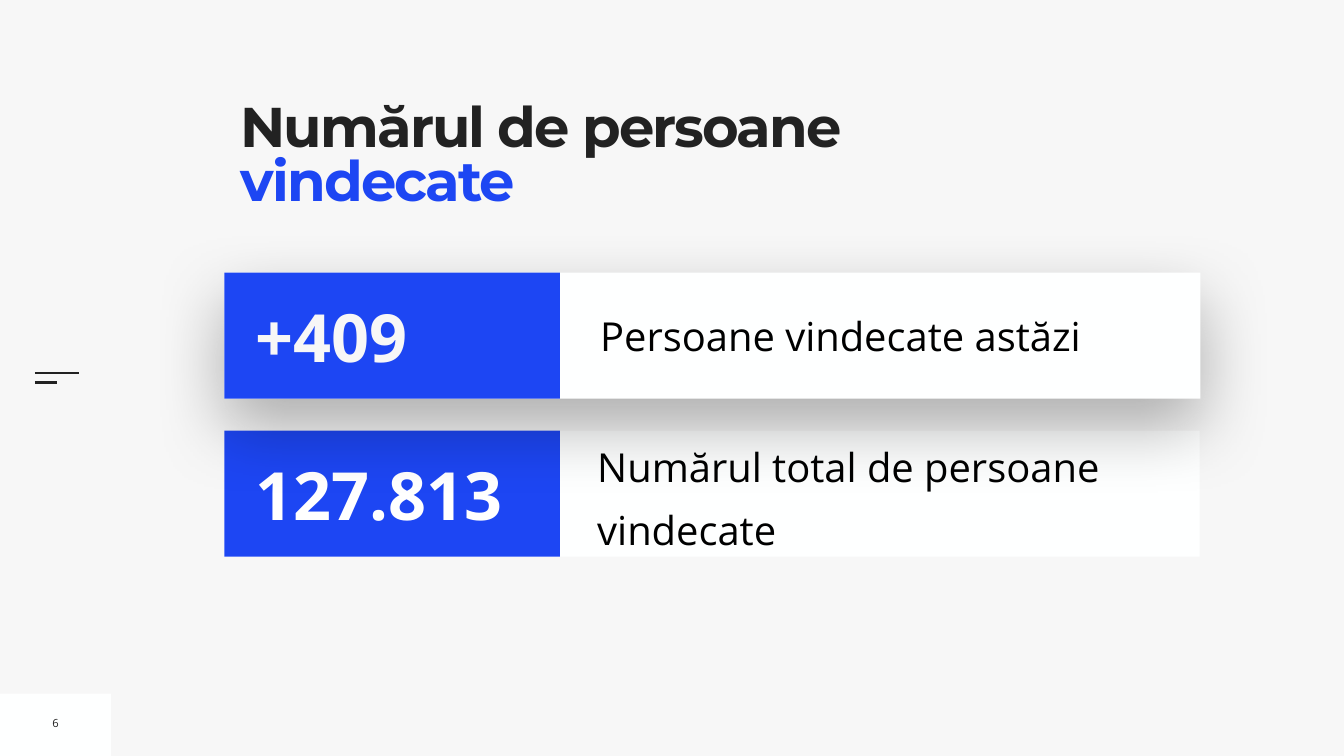
from lxml import etree
from pptx import Presentation
from pptx.dml.color import RGBColor
from pptx.enum import shapes, text
from pptx.oxml.ns import qn
from pptx.util import Pt

BLUE, INK, PAPER, WHITE = "1D46F3", "222222", "F7F7F7", "FEFFFF"
rgb = RGBColor.from_string

prs = Presentation()
prs.slide_width, prs.slide_height = Pt(1920), Pt(1080)
slide = prs.slides.add_slide(prs.slide_layouts[5])
slide.background.fill.solid()
slide.background.fill.fore_color.rgb = rgb(PAPER)


def add_panel(left, top, width, height, color):
    panel = slide.shapes.add_shape(
        shapes.MSO_SHAPE.RECTANGLE, Pt(left), Pt(top), Pt(width), Pt(height))
    panel.shadow.inherit = False
    panel.fill.solid()
    panel.fill.fore_color.rgb = rgb(color)
    panel.line.fill.background()
    return panel


def add_label(words, box, size, color, bold=False, inset=7.2, wrap=True):
    """Add a vertically centred text box and return its paragraph."""
    frame = slide.shapes.add_textbox(*map(Pt, box)).text_frame
    frame.word_wrap = wrap
    frame.auto_size = text.MSO_AUTO_SIZE.SHAPE_TO_FIT_TEXT
    frame.vertical_anchor = text.MSO_ANCHOR.MIDDLE
    frame.margin_left = frame.margin_right = Pt(inset)
    frame.margin_top = frame.margin_bottom = Pt(inset)
    line = frame.paragraphs[0]
    line.text = words
    line.font.name, line.font.size, line.font.bold = "Open Sans", Pt(size), bold
    line.font.color.rgb = rgb(color)
    return line


# Page corner and menu mark
add_panel(0, 991, 158.5, 89, WHITE)
for top, right in ((533.5, 113), (546.5, 81.5)):
    dash = slide.shapes.add_connector(
        shapes.MSO_CONNECTOR.STRAIGHT, Pt(49.7), Pt(top), Pt(right), Pt(top))
    dash.line.color.rgb = rgb(INK)
    dash.line.width = Pt(3)
    etree.SubElement(dash._element.spPr, qn("a:effectLst"))
page = add_label("6", (67, 1014.5, 24.5, 36.7), 16, INK, wrap=False)
page.alignment = text.PP_ALIGN.CENTER

# Title
title = slide.shapes.title
title.left, title.top, title.width, title.height = map(Pt, (343.5, 149, 936.7, 196.6))
title.fill.solid()
title.fill.fore_color.rgb = rgb(PAPER)
frame = title.text_frame
frame.word_wrap = True
frame.auto_size = text.MSO_AUTO_SIZE.NONE
frame.vertical_anchor = text.MSO_ANCHOR.TOP
frame.margin_left = frame.margin_right = frame.margin_top = frame.margin_bottom = 0
heading = frame.paragraphs[0]
heading.alignment = text.PP_ALIGN.LEFT
heading.line_spacing = 0.8
heading.font.name, heading.font.size, heading.font.bold = "Montserrat", Pt(80), True
for words, color in (("Numărul de persoane ", INK), ("vindecate", BLUE)):
    run = heading.add_run()
    run.text = words
    run.font.color.rgb = rgb(color)
    run._r.get_or_add_rPr().set("spc", "-270")

# Figures: the total first, so that the shadow of today's row falls on it
ROW_LEFT, ROW_HEIGHT = 320.4, 180
rows = (
    (615.3, 1393.2, "127.813", "FFFFFF", "Numărul total de persoane vindecate",
     (853.2, 616.3, 860.4, 170), 0),
    (389.5, 1394.6, "+409", PAPER, "Persoane vindecate astăzi",
     (850.3, 437, 846.7, 83.5), 7.2),
)
for top, width, count, count_color, caption, caption_box, inset in rows:
    card = add_panel(ROW_LEFT, top, width, ROW_HEIGHT, WHITE)
    caption_line = add_label(caption, caption_box, 57, "000000", inset=inset)
    add_panel(ROW_LEFT, top, 479.5, ROW_HEIGHT, BLUE)
    add_label(count, (358.6, top + 25.2, 434.2, 129.6), 95, count_color, bold=True)
    if caption.startswith("Numărul"):
        caption_line.line_spacing = 1.3
        caption_line.space_before = Pt(20)

# The last card is today's row
effects = card._element.spPr.find(qn("a:effectLst"))
shadow = etree.SubElement(
    effects, qn("a:outerShdw"), blurRad=str(Pt(100)), dist=str(Pt(40)),
    dir="5400000", rotWithShape="0")
shade = etree.SubElement(shadow, qn("a:srgbClr"), val="000000")
etree.SubElement(shade, qn("a:alpha"), val="30000")

prs.save("out.pptx")
